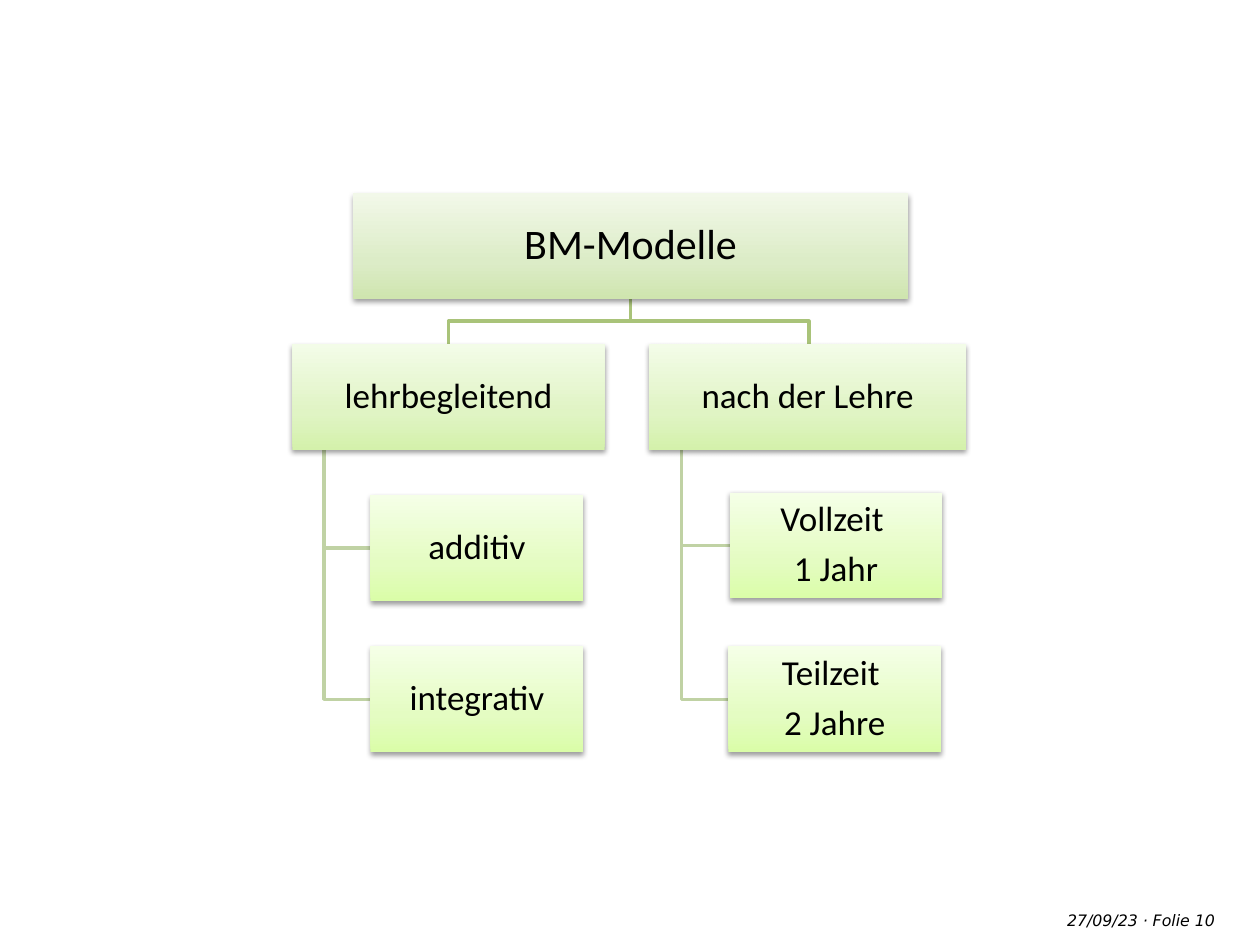
import copy

import pptx
import pptx.dml.color
import pptx.enum.shapes
import pptx.enum.text
import pptx.oxml
import pptx.oxml.ns
import pptx.util
from pptx.util import Inches

COLORS = {"text": "000000", "upper line": "A9C379", "lower line": "C0D2A4"}
GRADIENTS = {
    "root": ("CFE5AF", "DCECC7", "F2F8E9"),
    "branch": ("D4F1AB", "E0F4C4", "F3FCE8"),
    "leaf": ("DAFDA8", "E4FCC2", "F5FFE7"),
}
STOPS = (0, 0.35, 1)
BOX_HEIGHT = 0.84
ROOT = (2.8, 1.53, 4.41)
BRANCH_TOP = 2.73
LEAF_WIDTH = 1.69
BRANCHES = [
    # name, left, width, stem x, drop x, leaves as (lines, left, top)
    ("nach der Lehre", 5.15, 2.52, 5.41, 6.42,
     [(["Teilzeit ", "2 Jahre"], 5.78, 5.13), (["Vollzeit ", "1 Jahr"], 5.79, 3.91)]),
    ("lehrbegleitend", 2.32, 2.48, 2.57, 3.56,
     [(["integrativ"], 2.94, 5.13), (["additiv"], 2.94, 3.93)]),
]
SHADOW = (
    '<a:outerShdw %s blurRad="39370" dist="20320" dir="5400000" rotWithShape="0">'
    '<a:srgbClr val="000000"><a:alpha val="38000"/></a:srgbClr></a:outerShdw>'
    % pptx.oxml.ns.nsdecls("a")
)


def rgb(code):
    return pptx.dml.color.RGBColor.from_string(code)


class Chart:
    """Draws organisation chart parts on one slide."""

    def __init__(self, slide):
        self.shapes = slide.shapes

    def set_text(self, frame, lines, size, font, align, margin):
        frame.word_wrap = True
        frame.margin_left = frame.margin_right = Inches(margin)
        frame.margin_top = frame.margin_bottom = Inches(margin)
        frame.text = "\n".join(lines)
        for paragraph in frame.paragraphs:
            paragraph.alignment = align
            paragraph.font.size = pptx.util.Pt(size)
            paragraph.font.name = font
            paragraph.font.color.rgb = rgb(COLORS["text"])

    def box(self, lines, left, top, width, level, size=20, margin=0.01):
        box = self.shapes.add_shape(
            pptx.enum.shapes.MSO_SHAPE.RECTANGLE,
            Inches(left), Inches(top), Inches(width), Inches(BOX_HEIGHT))
        box.line.fill.background()
        box.fill.gradient()
        box.fill.gradient_angle = 90
        stop_list = box._element.spPr.find(".//" + pptx.oxml.ns.qn("a:gsLst"))
        stop_list.append(copy.deepcopy(stop_list[-1]))
        for stop, position, color in zip(box.fill.gradient_stops, STOPS, GRADIENTS[level]):
            stop.position = position
            stop.color.rgb = rgb(color)
        box.shadow.inherit = False
        effects = box._element.spPr.find(pptx.oxml.ns.qn("a:effectLst"))
        effects.append(pptx.oxml.parse_xml(SHADOW))

        frame = box.text_frame
        self.set_text(frame, lines, size, "Calibri", pptx.enum.text.PP_ALIGN.CENTER, margin)
        frame.vertical_anchor = pptx.enum.text.MSO_ANCHOR.MIDDLE
        for paragraph in frame.paragraphs:
            paragraph.line_spacing = 0.9
            paragraph.space_after = pptx.util.Pt(0.35 * size)

    def elbow(self, points, color):
        start, *others = [(Inches(x), Inches(y)) for x, y in points]
        builder = self.shapes.build_freeform(*start)
        builder.add_line_segments(others, close=False)
        line = builder.convert_to_shape()
        line.fill.background()
        line.line.color.rgb = rgb(COLORS[color])
        line.line.width = pptx.util.Pt(2)
        line.shadow.inherit = False

    def footer(self, text, left, width, align):
        label = self.shapes.add_textbox(
            Inches(left), Inches(7.23), Inches(width), Inches(0.2))
        self.set_text(label.text_frame, [text], 9, "DejaVu Sans", align, 0)
        label.text_frame.paragraphs[0].font.italic = True


def main():
    deck = pptx.Presentation()
    deck.slide_width, deck.slide_height = Inches(10), Inches(7.5)
    chart = Chart(deck.slides.add_slide(deck.slide_layouts[6]))

    chart.footer("27/09/23", 7.49, 1.54, pptx.enum.text.PP_ALIGN.RIGHT)
    chart.footer("· Folie 10", 9.07, 0.76, pptx.enum.text.PP_ALIGN.LEFT)

    root_left, root_top, root_width = ROOT
    center = root_left + root_width / 2
    root_bottom = root_top + BOX_HEIGHT
    middle = (root_bottom + BRANCH_TOP) / 2
    branch_bottom = BRANCH_TOP + BOX_HEIGHT
    for _, _, _, stem, drop, leaves in BRANCHES:
        for _, left, top in leaves:
            leaf_middle = top + BOX_HEIGHT / 2
            chart.elbow([(stem, branch_bottom), (stem, leaf_middle), (left, leaf_middle)],
                        "lower line")
        chart.elbow([(center, root_bottom), (center, middle), (drop, middle),
                     (drop, BRANCH_TOP)], "upper line")

    chart.box(["BM-Modelle"], *ROOT, "root", size=24, margin=0.02)
    for name, left, width, _, _, leaves in reversed(BRANCHES):
        chart.box([name], left, BRANCH_TOP, width, "branch")
        for lines, leaf_left, top in reversed(leaves):
            chart.box(lines, leaf_left, top, LEAF_WIDTH, "leaf")

    deck.save("out.pptx")


if __name__ == "__main__":
    main()
